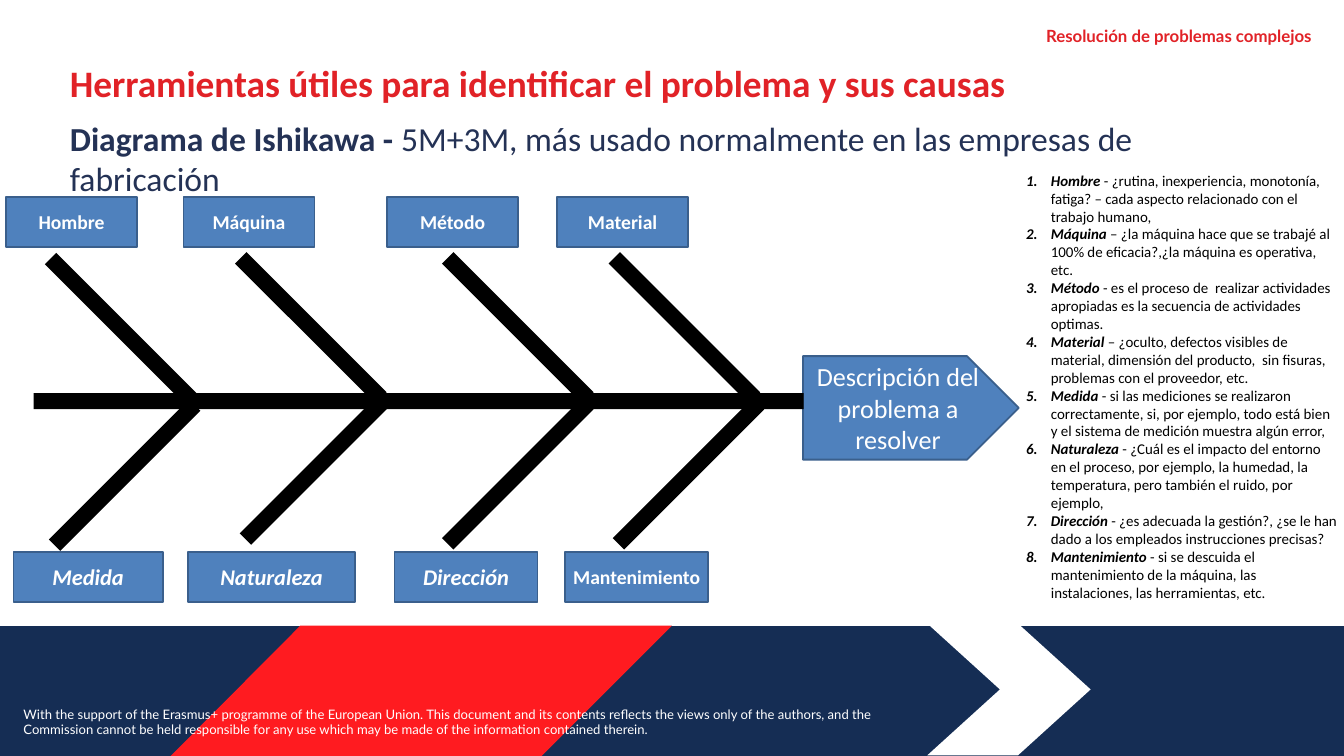
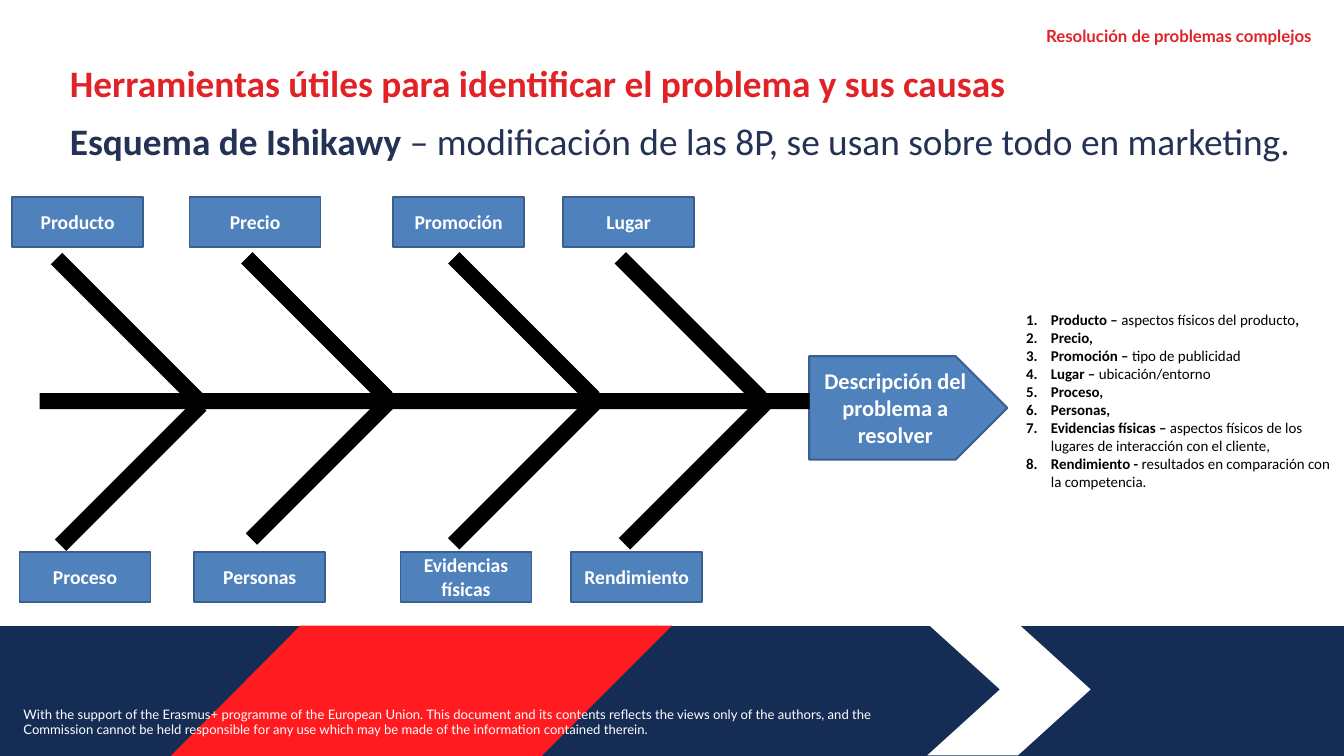
from lxml import etree
from pptx import Presentation
from pptx.dml.color import RGBColor
from pptx.enum.shapes import MSO_SHAPE
from pptx.enum.text import MSO_ANCHOR, PP_ALIGN
from pptx.oxml.ns import qn
from pptx.util import Pt

PX = 9144  # EMU per px, 100 px to the inch
WIDTH, HEIGHT = 2000, 1125

NAVY = RGBColor(0x15, 0x2D, 0x54)
BRIGHT = RGBColor(0xFF, 0x1B, 0x20)
RED = RGBColor(0xE1, 0x22, 0x27)
INK = RGBColor(0x24, 0x32, 0x55)
BLUE = RGBColor(0x4F, 0x81, 0xBD)
EDGE = RGBColor(0x3A, 0x5F, 0x8C)
WHITE = RGBColor(0xFF, 0xFF, 0xFF)
BLACK = RGBColor(0, 0, 0)

RECT, ARROW = MSO_SHAPE.RECTANGLE, MSO_SHAPE.PENTAGON
MIDDLE, TOP = MSO_ANCHOR.MIDDLE, MSO_ANCHOR.TOP
LEFT, RIGHT, CENTER = PP_ALIGN.LEFT, PP_ALIGN.RIGHT, PP_ALIGN.CENTER

BODY, SMALL = "Calibri", "Lato"
PAD = (10, 5, 10, 5)
INDENT = 37
TOPIC = "Resolución de problemas complejos"
TITLE = "Herramientas útiles para identificar el problema y sus causas"
EFFECT = "Descripción del problema a resolver"
SUPPORT = (
    "With the support of the Erasmus+ programme of the European Union. "
    "This document and its contents reflects the views only of the authors, "
    "and the Commission cannot be held responsible for any use which may be "
    "made of the information contained therein."
)

# Fishbone columns, measured from the left end of the spine
HIGH_TAGS = (-41, 223, 526, 779)
LOW_TAGS = (-30, 230, 537, 791)
HIGH_BONES = ((-18, 184), (265, 183), (573, 183), (821, 183))
LOW_BONES = ((-12, 402), (272, 393), (573, 400), (827, 400))
BONE, THICK = 295, 24
TAG_W, TAG_H = 195, 75

TAG = dict(size=Pt(21), name=BODY, bold=True)
BIG_TAG = dict(size=Pt(24), name=BODY, bold=True, italic=True)


def scale(*sizes):
    return [size * PX for size in sizes]


def put(para, text, color, style):
    """Add a run with the given colour and font values."""
    run = para.add_run()
    run.text = text
    run.font.color.rgb = color
    for key, value in style.items():
        setattr(run.font, key, value)


def setup(frame, pad=PAD, anchor=TOP):
    """Give a text frame its wrapping, anchor and margins."""
    frame.word_wrap = True
    frame.vertical_anchor = anchor
    sides = ("left", "top", "right", "bottom")
    for side, size in zip(sides, pad):
        setattr(frame, f"margin_{side}", size * PX)
    return frame


def text_box(slide, box, pad=PAD):
    return setup(slide.shapes.add_textbox(*scale(*box)).text_frame, pad)


def paint(shape, fill, line=None):
    shape.shadow.inherit = False
    shape.fill.solid()
    shape.fill.fore_color.rgb = fill
    if line is None:
        shape.line.fill.background()
    else:
        shape.line.color.rgb = line
        shape.line.width = Pt(2)


def block(slide, kind, box, text, style):
    """Draw a blue shape with centred white text."""
    shape = slide.shapes.add_shape(kind, *scale(*box))
    paint(shape, BLUE, EDGE)
    para = setup(shape.text_frame, anchor=MIDDLE).paragraphs[0]
    para.alignment = CENTER
    put(para, text, WHITE, style)


def bar(slide, left, top, width):
    shape = slide.shapes.add_shape(RECT, *scale(left, top, width, THICK))
    paint(shape, BLACK)
    return shape


def tilt(shape):
    """Turn the view of a shape by 45 degrees, counterclockwise."""
    scene = etree.SubElement(shape._element.spPr, qn("a:scene3d"))
    camera = etree.SubElement(scene, qn("a:camera"), prst="orthographicFront")
    etree.SubElement(camera, qn("a:rot"), lat="0", lon="0", rev="2700000")
    etree.SubElement(scene, qn("a:lightRig"), rig="threePt", dir="t")


def band(slide, left, top):
    """Draw the footer band with its red stripe, chevron and support text."""
    areas = (
        (NAVY, ((0, 0), (2000, 0), (2000, 194), (0, 194))),
        (WHITE, ((1380, -3), (1515, -3), (1623, 95),
                 (1515, 193), (1380, 193), (1488, 95))),
        (BRIGHT, ((447, 0), (1000, 0), (806, 194), (254, 194))),
    )
    for color, points in areas:
        spots = [(left + x, top + y) for x, y in points]
        path = slide.shapes.build_freeform(*spots[0], scale=PX)
        path.add_line_segments(spots[1:], close=True)
        paint(path.convert_to_shape(), color)
    frame = text_box(slide, (left + 25, top + 115, 1375, 57))
    put(frame.paragraphs[0], SUPPORT, WHITE, dict(size=Pt(14), name=SMALL))


def topic(slide, box):
    para = text_box(slide, box, (0, 1, 0, 0)).paragraphs[0]
    para.alignment = RIGHT
    put(para, TOPIC, RED, dict(size=Pt(18), name=SMALL, bold=True))


def heading(slide, box, name, note, size):
    frame = text_box(slide, box, (1, 2, 0, 0))
    para = frame.paragraphs[0]
    para.space_before = Pt(1.1)
    put(para, TITLE, RED, dict(size=Pt(40), name=BODY, bold=True))
    para = frame.add_paragraph()
    para.space_before, para.space_after = Pt(13.5), Pt(6)
    for text, bold in ((name, True), (note, False)):
        put(para, text, INK, dict(size=Pt(size), name=BODY, bold=bold))


def fish(slide, left, top, high, low, head, style):
    """Draw the fishbone; low holds (text, width, style) for each tag."""
    block(slide, ARROW, (left + 1145, top + 237, head, 154), EFFECT, style)
    bar(slide, left, top + 292, 1146)
    for bones, turn in ((LOW_BONES, 0), (HIGH_BONES, 90)):
        for x, y in bones:
            bone = bar(slide, left + x, top + y, BONE)
            bone.rotation = turn
            tilt(bone)
    for x, text in zip(HIGH_TAGS, high):
        block(slide, RECT, (left + x, top, TAG_W, TAG_H), text, TAG)
    for x, (text, width, look) in zip(LOW_TAGS, low):
        block(slide, RECT, (left + x, top + 528, width, TAG_H), text, look)


def causes(slide, box, items, italic):
    """List the causes; the runs of an item are bold and plain by turns."""
    frame = text_box(slide, box)
    for i, item in enumerate(items):
        para = frame.add_paragraph() if i else frame.paragraphs[0]
        para.alignment = LEFT
        props = para._p.get_or_add_pPr()
        props.set("marL", str(INDENT * PX))
        props.set("indent", str(-INDENT * PX))
        etree.SubElement(props, qn("a:buAutoNum"), type="arabicPeriod")
        for j, text in enumerate(item):
            bold = j % 2 == 0
            put(para, text, BLACK, dict(size=Pt(16), name=BODY, bold=bold,
                                        italic=bold and italic))


def base(deck):
    """Add a blank slide with the parts that all slides share."""
    slide = deck.slides.add_slide(deck.slide_layouts[6])
    band(slide, 0, 931)
    topic(slide, (900, 37, 1052, 32))
    return slide


def factory(deck):
    slide = base(deck)
    heading(slide, (103, 88, 1814, 210), "Diagrama de Ishikawa - ",
            "5M+3M, más usado normalmente en las empresas de fabricación", 36)
    low = (("Medida", 222, BIG_TAG), ("Naturaleza", 248, BIG_TAG),
           ("Dirección", 213, BIG_TAG), ("Mantenimiento", 213, TAG))
    fish(slide, 50, 293, ("Hombre", "Máquina", "Método", "Material"), low,
         321, dict(size=Pt(28), name=BODY))
    items = (
        ("Hombre", " - ¿rutina, inexperiencia, monotonía, fatiga? – cada "
         "aspecto relacionado con el trabajo humano,"),
        ("Máquina", " – ¿la máquina hace que se trabajé al 100% de "
         "eficacia?,¿la máquina es operativa, etc."),
        ("Método", " - es el proceso de  realizar actividades apropiadas es "
         "la secuencia de actividades optimas."),
        ("Material ", "– ¿oculto, defectos visibles de material, dimensión "
         "del producto,  sin fisuras, problemas con el proveedor, etc."),
        ("Medida ", "- si las mediciones se realizaron correctamente, si, "
         "por ejemplo, todo está bien y el sistema de medición muestra "
         "algún error,"),
        ("Naturaleza ", "- ¿Cuál es el impacto del entorno en el proceso, "
         "por ejemplo, la humedad, la temperatura, pero también el ruido, "
         "por ejemplo,"),
        ("Dirección ", "- ¿es adecuada la gestión?, ¿se le han dado a los "
         "empleados instrucciones precisas?"),
        ("Mantenimiento", " - si se descuida el mantenimiento de la máquina, "
         "las instalaciones, las herramientas, etc."),
    )
    causes(slide, (1517, 250, 483, 693), items, True)


def market(deck):
    slide = base(deck)
    heading(slide, (103, 88, 1850, 156), "Esquema de Ishikawy ",
            "– modificación de las 8P, se usan sobre todo en marketing.", 40)
    names = ("Proceso", "Personas", "Evidencias físicas", "Rendimiento")
    low = [(name, TAG_W, TAG) for name in names]
    fish(slide, 59, 293, ("Producto", "Precio", "Promoción", "Lugar"), low,
         295, dict(size=Pt(24), name=BODY, bold=True))
    items = (
        ("Producto – ", "aspectos físicos del producto", ","),
        ("Precio,",),
        ("Promoción – ", "tipo de publicidad"),
        ("Lugar – ", "ubicación/entorno"),
        ("Proceso,",),
        ("Personas,",),
        ("Evidencias físicas – ", "aspectos físicos de los lugares de "
         "interacción con el cliente,"),
        ("Rendimiento - ", "resultados en comparación con la competencia."),
    )
    causes(slide, (1517, 458, 483, 279), items, False)


def main():
    deck = Presentation()
    deck.slide_width, deck.slide_height = scale(WIDTH, HEIGHT)
    factory(deck)
    market(deck)
    deck.save("out.pptx")


if __name__ == "__main__":
    main()
